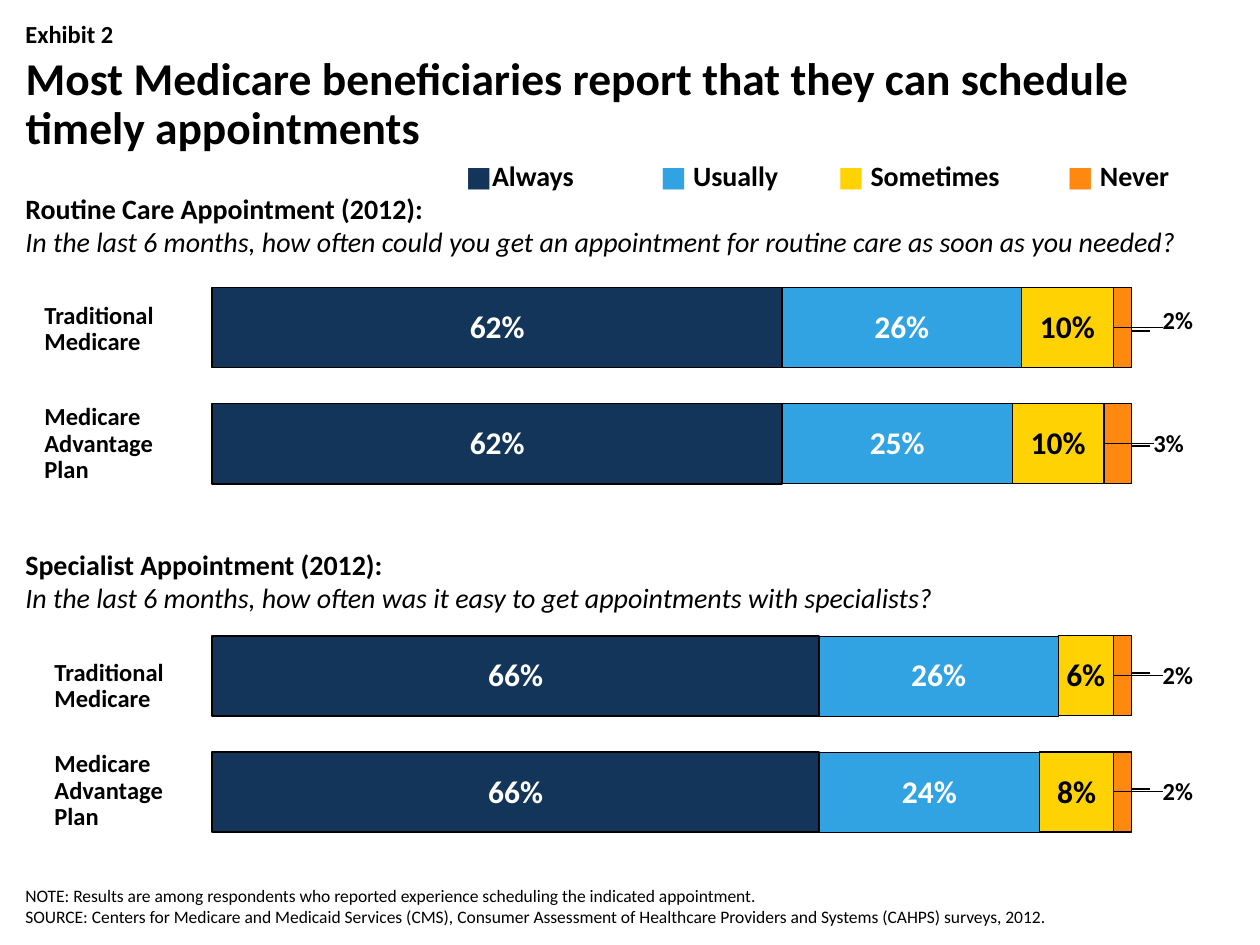
"""Builds the exhibit slide on how easily Medicare beneficiaries schedule appointments."""
from lxml import etree
from pptx import Presentation
from pptx.chart.data import CategoryChartData
from pptx.dml.color import RGBColor
from pptx.enum.chart import XL_CHART_TYPE, XL_LABEL_POSITION
from pptx.enum.shapes import MSO_CONNECTOR
from pptx.enum.text import MSO_ANCHOR, MSO_AUTO_SIZE, PP_ALIGN
from pptx.oxml import parse_xml
from pptx.oxml.ns import nsdecls, qn
from pptx.util import Emu, Pt

STACKED = XL_CHART_TYPE.BAR_STACKED
CENTER_LABEL, BASE_LABEL = XL_LABEL_POSITION.CENTER, XL_LABEL_POSITION.INSIDE_BASE
STRAIGHT = MSO_CONNECTOR.STRAIGHT
TOP, MIDDLE, BOTTOM = MSO_ANCHOR.TOP, MSO_ANCHOR.MIDDLE, MSO_ANCHOR.BOTTOM
NO_FIT = MSO_AUTO_SIZE.NONE
LEFT, CENTER = PP_ALIGN.LEFT, PP_ALIGN.CENTER

BLACK, WHITE = RGBColor(0, 0, 0), RGBColor(255, 255, 255)
NAVY, BLUE = RGBColor(0x13, 0x35, 0x59), RGBColor(0x31, 0xA3, 0xE3)
YELLOW, ORANGE = RGBColor(0xFF, 0xD2, 0x04), RGBColor(0xFF, 0x88, 0x11)
FONT = "Calibri"
PX = 914400 // 126

EXHIBIT = "Exhibit 2"
TITLE = "Most Medicare beneficiaries report that they can schedule timely appointments"
FOOTNOTES = [
    "NOTE: Results are among respondents who reported experience scheduling the indicated appointment.",
    "SOURCE: Centers for Medicare and Medicaid Services (CMS), Consumer Assessment of Healthcare "
    "Providers and Systems (CAHPS) surveys, 2012.",
]
QUESTIONS = [
    (185, "Routine Care Appointment (2012):",
     "In the last 6 months, how often could you get an appointment for routine care as soon as you needed?"),
    (541, "Specialist Appointment (2012):",
     "In the last 6 months, how often was it easy to get appointments with specialists?"),
]
PLANS = [
    ("Traditional Medicare", (32, 296, 168, 67)),
    ("Medicare Advantage Plan", (32, 398, 168, 93)),
    ("Traditional Medicare", (42, 653, 158, 67)),
    ("Medicare Advantage Plan", (42, 745, 158, 93)),
]
LEADER_TOPS = [331, 446, 673, 789]
ANSWERS = [
    ("Always", "■", NAVY, WHITE, 1, (0.62, 0.62, None, 0.66, 0.66)),
    ("Usually", "■ ", BLUE, WHITE, 0.25, (0.26, 0.25, None, 0.26, 0.24)),
    ("Sometimes", "■ ", YELLOW, BLACK, 0.75, (0.1, 0.1, None, 0.06, 0.08)),
    ("Never", "■ ", ORANGE, BLACK, 0.75, (0.02, 0.03, None, 0.02, 0.02)),
]
NEVER_OFFSETS = {0: (0.04, -0.01), 1: (0.04, 0), 3: (0.04, 0), 4: (0.04, 0)}


def px(*lengths):
    return [Emu(length * PX) for length in lengths]


def style(font, size, color=BLACK, bold=False, italic=False):
    font.name, font.size, font.bold, font.italic = FONT, Pt(size), bold, italic
    font.color.rgb = color


def add_run(paragraph, text, size, color=BLACK, bold=False, italic=False):
    run = paragraph.add_run()
    run.text = text
    style(run.font, size, color, bold, italic)


def add_text(slide, box, lines, size, anchor=TOP, spacing=None):
    frame = slide.shapes.add_textbox(*px(*box)).text_frame
    frame.word_wrap, frame.vertical_anchor = True, anchor
    for index, (text, bold, italic) in enumerate(lines):
        paragraph = frame.add_paragraph() if index else frame.paragraphs[0]
        paragraph.line_spacing = spacing
        add_run(paragraph, text, size, bold=bold, italic=italic)


def manual_layout(**settings):
    layout = parse_xml(f"<c:layout {nsdecls('c')}><c:manualLayout/></c:layout>")
    for key, value in settings.items():
        etree.SubElement(layout[0], qn(f"c:{key}")).set("val", str(value))
    return layout


def add_leaders(slide):
    for top in LEADER_TOPS:
        leader = slide.shapes.add_connector(STRAIGHT, *px(1130, top, 1150, top))
        leader.line.color.rgb, leader.line.width = BLACK, Pt(1)
        etree.SubElement(leader._element.spPr, qn("a:effectLst"))


def add_answer_chart(slide):
    data = CategoryChartData(number_format="0%")
    data.categories = ["1", "2", "3", "4", "5"]
    for answer, _, _, _, _, shares in ANSWERS:
        data.add_series(answer, shares)
    chart = slide.shapes.add_chart(STACKED, *px(179, 247, 1108, 625), data).chart
    style(chart.font, 14, WHITE, bold=True)
    chart.has_legend = chart.has_title = False
    chart.category_axis.visible = chart.value_axis.visible = False
    chart.category_axis.reverse_order = True
    chart.value_axis.has_major_gridlines = False
    chart.value_axis.minimum_scale, chart.value_axis.maximum_scale = 0, 1.1
    chart.value_axis.major_unit = 0.1
    plot = chart.plots[0]
    plot.gap_width, plot.overlap, plot.vary_by_categories = 45, 100, False

    for series, (_, _, fill, label_color, line_width, _) in zip(plot.series, ANSWERS):
        series.format.fill.solid()
        series.format.fill.fore_color.rgb = fill
        series.format.line.color.rgb = BLACK
        series.format.line.width = Pt(line_width)
        never = fill == ORANGE
        labels = series.data_labels
        labels.show_value, labels.number_format = True, "0%"
        labels.number_format_is_linked = False
        labels.position = BASE_LABEL if never else CENTER_LABEL
        style(labels.font, 14 if never else 18, label_color, bold=True)

    for index, (x, y) in NEVER_OFFSETS.items():
        label = series.points[index].data_label
        style(label.font, 14, BLACK, bold=True)
        label.position = BASE_LABEL
    for label, (x, y) in zip(series._element.xpath(".//c:dLbl"), NEVER_OFFSETS.values()):
        label.insert(1, manual_layout(x=x, y=y))

    plot_area = chart._chartSpace.chart.plotArea
    for layout in plot_area.findall(qn("c:layout")):
        plot_area.remove(layout)
    plot_area.insert(0, manual_layout(layoutTarget="inner", xMode="edge", yMode="edge",
                                      x=0.03, y=0.036, w=0.913, h=0.929))


def add_legend(slide):
    table = slide.shapes.add_table(1, len(ANSWERS), *px(420, 158, 798, 38)).table
    table.first_row = table.horz_banding = False
    for cell, (answer, marker, color, *_) in zip(table.rows[0].cells, ANSWERS):
        cell.fill.background()
        cell.margin_left = cell.margin_right = cell.margin_top = cell.margin_bottom = 0
        cell.vertical_anchor = MIDDLE
        paragraph = cell.text_frame.paragraphs[0]
        paragraph.alignment = CENTER
        add_run(paragraph, marker, 16, color, bold=True)
        add_run(paragraph, answer, 16, bold=True)


def main():
    deck = Presentation()
    deck.slide_width, deck.slide_height = px(1260, 945)
    slide = deck.slides.add_slide(deck.slide_layouts[5])

    title = slide.shapes.title
    title.left, title.top, title.width, title.height = px(13, 50, 1235, 126)
    title.text_frame.vertical_anchor, title.text_frame.auto_size = TOP, NO_FIT
    heading = title.text_frame.paragraphs[0]
    heading.alignment, heading.line_spacing = LEFT, 0.9
    add_run(heading, TITLE, 26, bold=True)

    add_text(slide, (13, 13, 1235, 43), [(EXHIBIT, True, False)], 14)
    add_leaders(slide)
    add_text(slide, (13, 857, 1147, 76), [(note, False, False) for note in FOOTNOTES], 10, BOTTOM)
    add_answer_chart(slide)
    for plan, box in PLANS:
        add_text(slide, box, [(plan, True, False)], 14, MIDDLE, 0.9)
    for top, topic, question in QUESTIONS:
        add_text(slide, (13, top, 1235, 81), [(topic, True, False), (question, False, True)], 16)
    add_legend(slide)
    deck.save("out.pptx")


if __name__ == "__main__":
    main()
